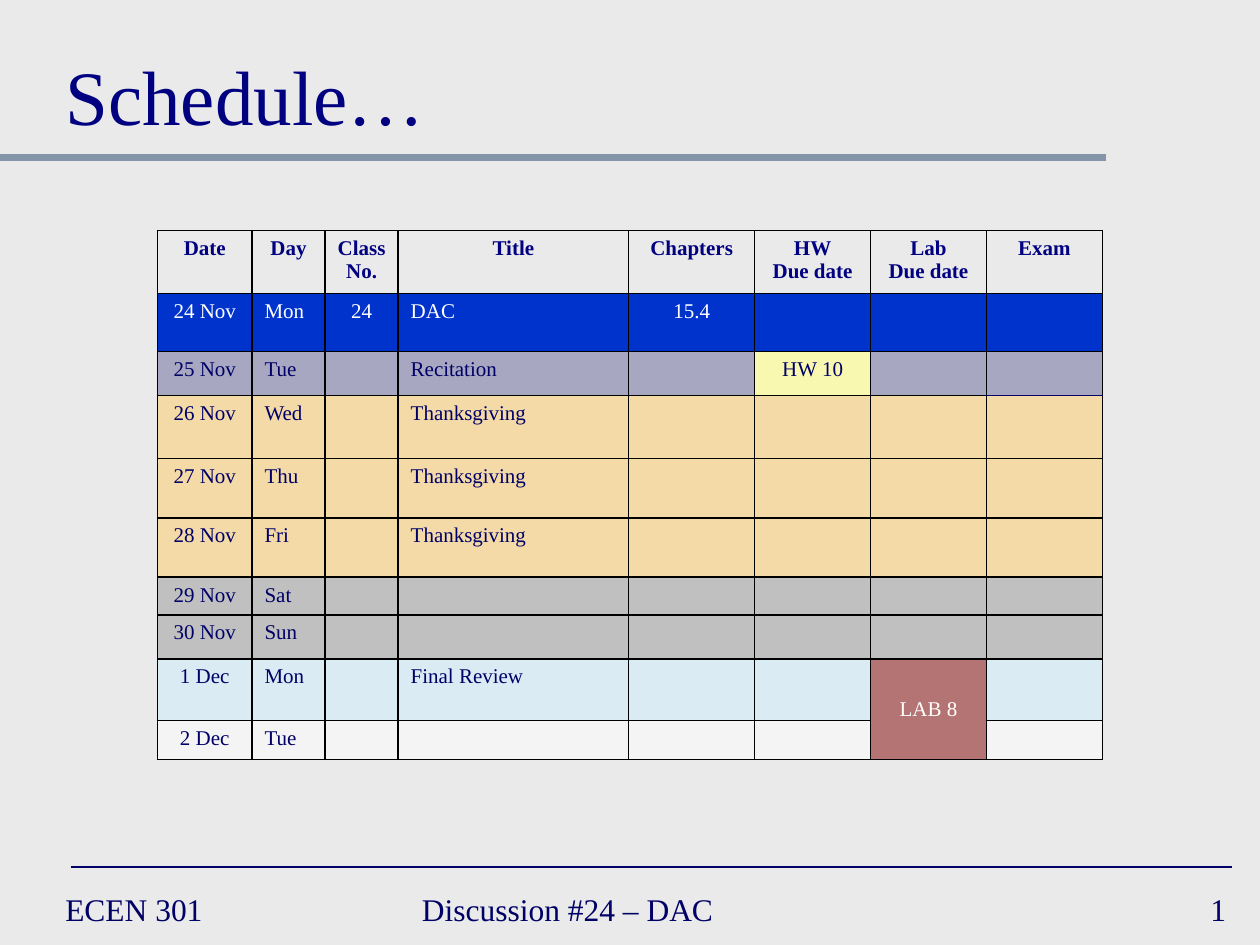
from lxml import etree
from pptx import Presentation
from pptx.dml.color import RGBColor
from pptx.enum.shapes import MSO_CONNECTOR
from pptx.enum.text import MSO_ANCHOR, MSO_AUTO_SIZE, PP_ALIGN
from pptx.oxml.ns import qn
from pptx.util import Inches, Pt

LEFT, CENTER, RIGHT = PP_ALIGN.LEFT, PP_ALIGN.CENTER, PP_ALIGN.RIGHT
TOP, MIDDLE, BOTTOM = MSO_ANCHOR.TOP, MSO_ANCHOR.MIDDLE, MSO_ANCHOR.BOTTOM
STRAIGHT = MSO_CONNECTOR.STRAIGHT
FIT_NONE = MSO_AUTO_SIZE.NONE

FONT = "Times New Roman"
NAVY, INK, WHITE, BLACK = "000080", "000066", "FFFFFF", "000000"

COLS = [0.75, 0.58, 0.58, 1.83, 1, 0.92, 0.92, 0.92]
HEAD = ["Date", "Day", "Class\nNo.", "Title", "Chapters",
        "HW\nDue date", "Lab\nDue date", "Exam"]
LEFT_COLS = (1, 3)

# Fills as (colour, opacity in percent)
CLASS = ("0033CC", 100)
RECITE = ("666699", 50)
BREAK = ("FFCC66", 50)
WEEKEND = ("C0C0C0", 100)
REVIEW = ("CCECFF", 50)
PLAIN = (WHITE, 50)
HOMEWORK = ("FFFF99", 70)
LAB = ("800000", 50)

# Row height, fill, text by column
ROWS = [
    (0.46, CLASS, ["24 Nov", "Mon", "24", "DAC", "15.4"]),
    (0.35, RECITE, ["25 Nov", "Tue", "", "Recitation", "", "HW 10"]),
    (0.5, BREAK, ["26 Nov", "Wed", "", "Thanksgiving"]),
    (0.47, BREAK, ["27 Nov", "Thu", "", "Thanksgiving"]),
    (0.47, BREAK, ["28 Nov", "Fri", "", "Thanksgiving"]),
    (0.3, WEEKEND, ["29 Nov", "Sat"]),
    (0.35, WEEKEND, ["30 Nov", "Sun"]),
    (0.49, REVIEW, ["1 Dec", "Mon", "", "Final Review", "", "", "LAB 8"]),
    (0.31, PLAIN, ["2 Dec", "Tue"]),
]
HEAD_TALL = 0.49
SPECIAL = {(2, 5): HOMEWORK, (8, 6): LAB}


def rgb(code):
    return RGBColor.from_string(code)


def write(frame, text, size, color, align=LEFT, bold=False):
    for i, part in enumerate(text.split("\n")):
        para = frame.paragraphs[0] if i == 0 else frame.add_paragraph()
        para.alignment = align
        if not part:
            # An empty cell keeps the small text height
            end = etree.SubElement(para._p, qn("a:endParaRPr"))
            end.set("sz", str(size * 100))
            continue
        run = para.add_run()
        run.text = part
        font = run.font
        font.name, font.size, font.bold = FONT, Pt(size), bold
        font.color.rgb = rgb(color)


def add_rule(slide, start, end, y, color, width):
    rule = slide.shapes.add_connector(
        STRAIGHT, Inches(start), Inches(y), Inches(end), Inches(y))
    rule.line.color.rgb = rgb(color)
    rule.line.width = Pt(width)
    etree.SubElement(rule._element.spPr, qn("a:effectLst"))


def set_title(slide, text):
    title = slide.shapes.title
    title.left, title.top = Inches(0.42), Inches(0.17)
    title.width, title.height = Inches(9.25), Inches(1)
    frame = title.text_frame
    frame.auto_size = FIT_NONE
    frame.vertical_anchor = BOTTOM
    write(frame, text, 44, NAVY)


def add_label(slide, left, width, text, align=LEFT):
    box = slide.shapes.add_textbox(
        Inches(left), Inches(7), Inches(width), Inches(0.42))
    frame = box.text_frame
    frame.word_wrap = True
    frame.vertical_anchor = MIDDLE
    write(frame, text, 18, INK, align)


def paint(cell, fill):
    if fill is None:
        cell.fill.background()
        return
    color, alpha = fill
    cell.fill.solid()
    cell.fill.fore_color.rgb = rgb(color)
    if alpha < 100:
        tint = cell._tc.tcPr.find(".//" + qn("a:srgbClr"))
        etree.SubElement(tint, qn("a:alpha")).set("val", str(alpha * 1000))


def add_edges(cell, colors):
    # Edges come before the fill in the cell properties
    props = cell._tc.get_or_add_tcPr()
    for i, side in enumerate("LRTB"):
        edge = etree.Element(qn("a:ln" + side), w=str(Pt(1)))
        solid = etree.SubElement(edge, qn("a:solidFill"))
        color = colors.get(side, BLACK)
        etree.SubElement(solid, qn("a:srgbClr")).set("val", color)
        props.insert(i, edge)


def fill_cell(cell, row, col, text, fill):
    fill = SPECIAL.get((row, col), fill)
    color = NAVY if row == 0 else WHITE if fill in (CLASS, LAB) else INK
    align = LEFT if row and col in LEFT_COLS else CENTER
    write(cell.text_frame, text, 12, color, align, row == 0)
    cell.vertical_anchor = MIDDLE if fill == LAB else TOP
    paint(cell, fill)
    # The edge between Recitation and the break is navy under Exam
    navy = {(2, 7): {"B": INK}, (3, 7): {"T": INK}}
    add_edges(cell, navy.get((row, col), {}))


def add_schedule(slide):
    rows = [(HEAD_TALL, None, HEAD)] + ROWS
    tall = sum(row[0] for row in rows)
    table = slide.shapes.add_table(
        len(rows), len(COLS), Inches(1.25), Inches(1.83),
        Inches(sum(COLS)), Inches(tall)).table
    table.first_row = table.horz_banding = False
    for col, width in enumerate(COLS):
        table.columns[col].width = Inches(width)
    for r, (height, fill, texts) in enumerate(rows):
        table.rows[r].height = Inches(height)
        for c in range(len(COLS)):
            text = texts[c] if c < len(texts) else ""
            fill_cell(table.cell(r, c), r, c, text, fill)
    # The lab is due over the last two days
    table.cell(8, 6).merge(table.cell(9, 6))


def main():
    deck = Presentation()
    deck.slide_width, deck.slide_height = Inches(10), Inches(7.5)
    slide = deck.slides.add_slide(deck.slide_layouts[5])
    back = slide.background.fill
    back.solid()
    back.fore_color.rgb = rgb("EAEAEA")

    # Rules under the title and above the footer
    add_rule(slide, 0, 8.78, 1.25, "8495A9", 4)
    add_rule(slide, 0.56, 9.78, 6.88, INK, 1)

    # Footer
    add_label(slide, 0.42, 2.17, "ECEN 301")
    add_label(slide, 3.25, 3.83, "Discussion #24 – DAC")
    add_label(slide, 7.75, 2.08, "1", RIGHT)

    # Content
    add_schedule(slide)
    set_title(slide, "Schedule…")
    deck.save("out.pptx")


if __name__ == "__main__":
    main()
